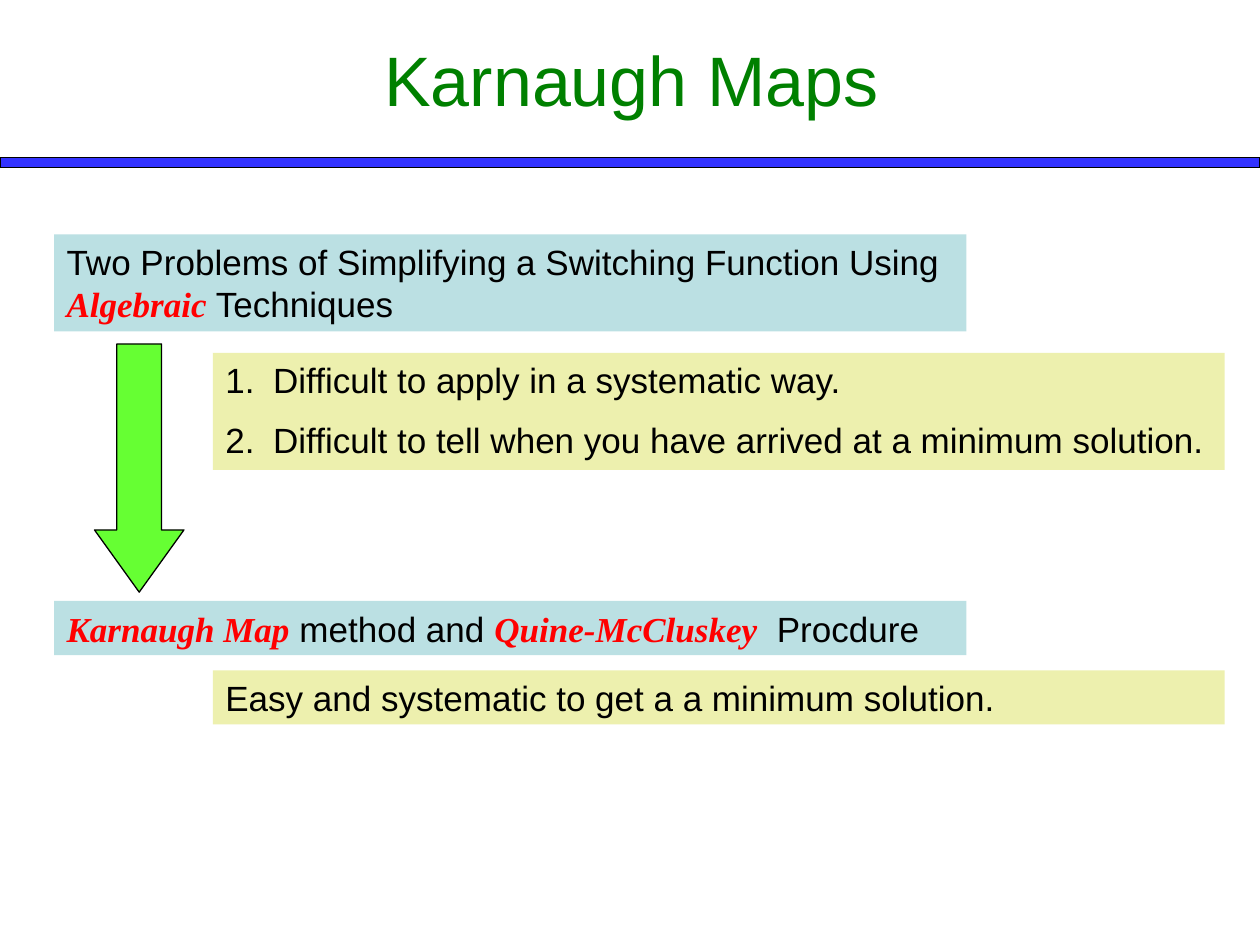
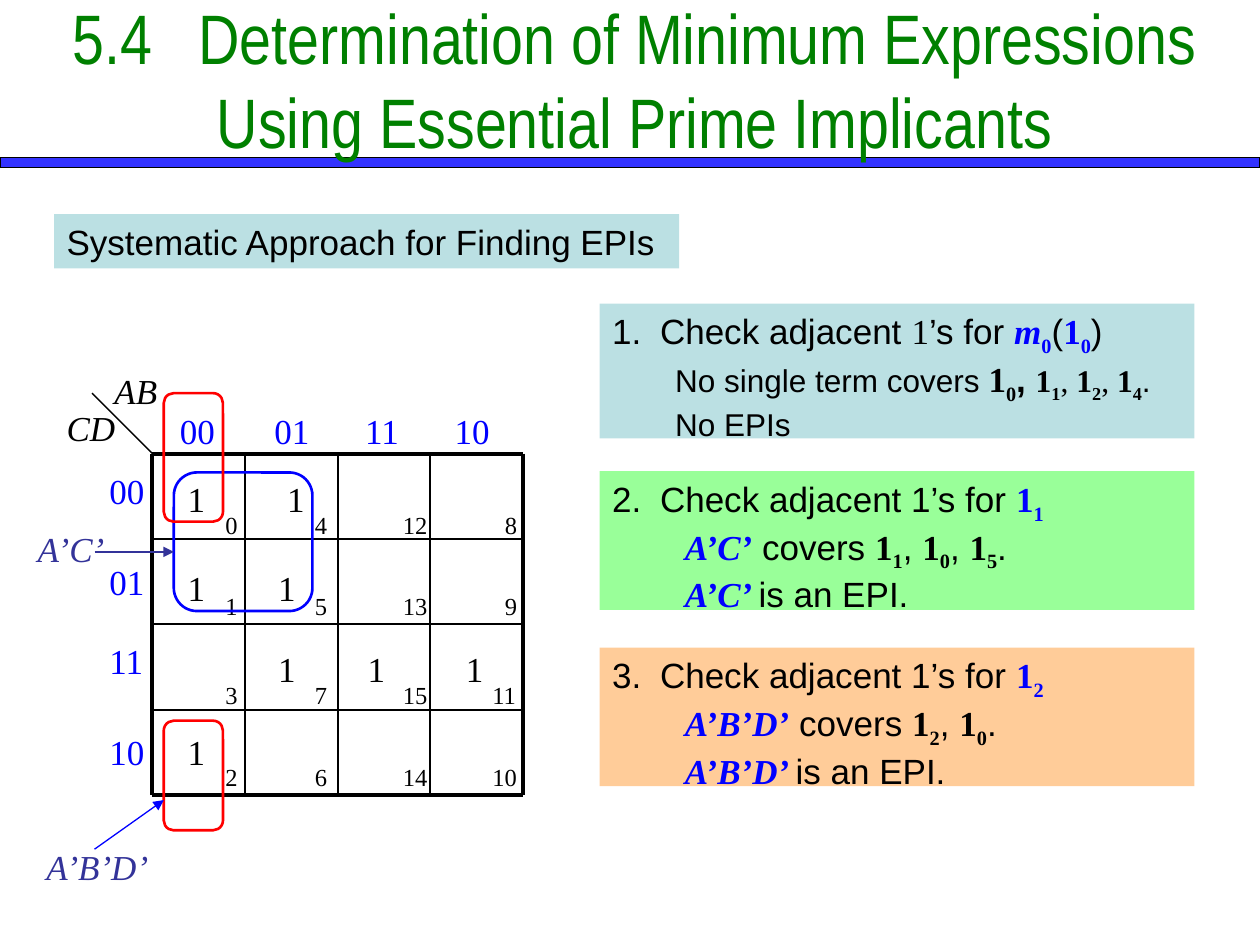
"""Build two slides on Karnaugh maps and essential prime implicants."""
import lxml.etree
import pptx
import pptx.dml.color
import pptx.enum.shapes
import pptx.enum.text
import pptx.oxml.ns
import pptx.util
from dataclasses import dataclass

Inches, Pt = pptx.util.Inches, pptx.util.Pt
SHAPES = pptx.enum.shapes.MSO_SHAPE
ALIGN = pptx.enum.text.PP_ALIGN
ANCHOR = pptx.enum.text.MSO_ANCHOR
qn = pptx.oxml.ns.qn


@dataclass(frozen=True)
class Theme:
    sans: str = "Arial"
    narrow: str = "Arial Narrow"
    serif: str = "Times New Roman"
    title_size: int = 40
    body_size: int = 20
    detail_size: int = 18
    index_size: int = 14
    black: str = "000000"
    green: str = "008000"
    band: str = "3333FF"
    red: str = "FF0000"
    blue: str = "0000FF"
    navy: str = "333399"
    teal: str = "BBE0E3"
    yellow: str = "EDF0AE"
    lime: str = "66FF33"
    mint: str = "99FF99"
    peach: str = "FFCC99"


THEME = Theme()

STYLES = {
    "plain": {},
    "strong": dict(bold=True, size=THEME.body_size),
    "serif": dict(name=THEME.serif),
    "key": dict(name=THEME.serif, color=THEME.red, bold=True, italic=True),
    "term": dict(name=THEME.serif, color=THEME.blue, bold=True, italic=True),
    "target": dict(name=THEME.serif, color=THEME.blue, bold=True),
    "one": dict(name=THEME.serif, bold=True),
    "large one": dict(name=THEME.serif, bold=True, size=THEME.body_size),
}


def minterm(index, style="one"):
    return [("1", style), (index, style, True)]


def implicant_step(target, term, covered):
    cover = [(" ", "plain"), (term, "term"), (" covers ", "plain")]
    for position, index in enumerate(covered):
        cover += ([(", ", "plain")] if position else []) + minterm(index)
    return [
        [("Check adjacent 1’s for ", "plain"), *minterm(target, "target")],
        cover + [(".", "plain")],
        [(" ", "plain"), (term + " ", "term"), ("is an EPI.", "plain")],
    ]


PROBLEM = [("Two Problems of Simplifying a Switching Function Using ", "plain"),
           ("Algebraic", "key"), (" Techniques", "plain")]
DIFFICULTIES = ["Difficult to apply in a systematic way.",
                "Difficult to tell when you have arrived at a minimum solution."]
METHODS = [("Karnaugh Map", "key"), (" method and ", "plain"),
           ("Quine-McCluskey", "key"), ("  Procdure", "plain")]
BENEFIT = "Easy and systematic to get a a minimum solution."

FIRST_STEP = [
    [("Check adjacent ", "plain"), ("1", "serif"), ("’s for ", "plain"),
     ("m", "term"), ("0", "target", True), ("(", "plain"),
     *minterm("0", "target"), (")", "plain")],
    [("No single term covers ", "plain"), *minterm("0", "large one"),
     (", ", "strong"), *minterm("1"), (", ", "serif"), *minterm("2"),
     (", ", "serif"), *minterm("4"), (".", "plain")],
    "No EPIs",
]
STEPS = [
    (2.41, 1.07, THEME.teal, THEME.detail_size, FIRST_STEP),
    (3.74, 1.10, THEME.mint, THEME.body_size, implicant_step("1", "A’C’", "105")),
    (5.14, 1.10, THEME.peach, THEME.body_size, implicant_step("2", "A’B’D’", "20")),
]

GRAY_CODE = ["00", "01", "11", "10"]
CELL_INDEXES = [[0, 4, 12, 8], [1, 5, 13, 9], [3, 7, 15, 11], [2, 6, 14, 10]]
MINTERMS = {0, 1, 2, 4, 5, 7, 11, 15}
MAP_LEFT, MAP_TOP, MAP_RIGHT, MAP_BOTTOM = 1.21, 3.60, 4.15, 6.31
CODE_LEFTS, CODE_TOPS = [1.33, 2.08, 2.80, 3.51], [3.68, 4.40, 5.03, 5.75]
ONE_LEFTS, ONE_TOPS = [1.39, 2.11, 2.82, 3.60], [3.74, 4.45, 5.09, 5.75]
INDEX_RIGHTS, INDEX_TOPS = [1.99, 2.70, 3.50, 4.21], [4.00, 4.64, 5.35, 6.00]
AXIS_NAMES = [("AB", 0.81, 2.88, 0.54), ("CD", 0.43, 3.18, 0.59)]
LOOPS = [(1.38, 3.75, 1.10, 1.10, THEME.blue),
         (1.30, 5.72, 0.47, 0.87, THEME.red),
         (1.30, 3.12, 0.47, 1.02, THEME.red)]
CALLOUTS = [("A’C’", 0.20, 4.14, 0.74, (0.75, 4.38, 1.38, 4.38), THEME.navy),
            ("A’B’D’", 0.27, 6.66, 1.02, (0.75, 6.74, 1.30, 6.35), THEME.blue)]


def rgb(color):
    return pptx.dml.color.RGBColor.from_string(color)


def set_font(font, name=None, size=None, color=None, bold=None, italic=None):
    if name:
        font.name = name
    if size:
        font.size = Pt(size)
    if color:
        font.color.rgb = rgb(color)
    if bold is not None:
        font.bold = bold
    if italic is not None:
        font.italic = italic


def fill_paragraph(para, content, size=THEME.body_size, name=THEME.sans,
                   color=THEME.black, italic=False, align=ALIGN.LEFT):
    para.alignment = align
    set_font(para.font, name, size, color, False, italic)
    if isinstance(content, str):
        para.text = content
        return
    for text, style, *subscript in content:
        span = para.add_run()
        span.text = text
        set_font(span.font, **STYLES[style])
        if subscript:
            span._r.get_or_add_rPr().set("baseline", "-25000")


def set_indent(para, margin, hanging, number=None):
    properties = para._p.get_or_add_pPr()
    properties.set("marL", str(Inches(margin)))
    properties.set("indent", str(-Inches(hanging)))
    if number:
        bullet = lxml.etree.Element(qn("a:buAutoNum"), type="arabicPeriod")
        if number > 1:
            bullet.set("startAt", str(number))
        properties.find(qn("a:defRPr")).addprevious(bullet)


def add_shape(page, kind, left, top, width, height, fill=None, line=None, weight=0.75):
    shape = page.shapes.add_shape(kind, *map(Inches, (left, top, width, height)))
    shape.shadow.inherit = False
    if fill:
        shape.fill.solid()
        shape.fill.fore_color.rgb = rgb(fill)
    else:
        shape.fill.background()
    if line:
        shape.line.color.rgb = rgb(line)
        shape.line.width = Pt(weight)
    else:
        shape.line.fill.background()
    return shape


def add_panel(page, left, top, width, height, fill, contents, detail_size=THEME.body_size):
    box = add_shape(page, SHAPES.RECTANGLE, left, top, width, height, fill)
    frame = box.text_frame
    frame.word_wrap = True
    frame.vertical_anchor = ANCHOR.TOP
    paras = [frame.paragraphs[0]] + [frame.add_paragraph() for _ in contents[1:]]
    for position, (para, content) in enumerate(zip(paras, contents)):
        fill_paragraph(para, content, detail_size if position else THEME.body_size)
    return paras


def add_label(page, text, left, top, width, height=0.43, **font):
    box = page.shapes.add_textbox(*map(Inches, (left, top, width, height)))
    box.text_frame.word_wrap = False
    fill_paragraph(box.text_frame.paragraphs[0], text, **{"name": THEME.serif, **font})
    return box


def add_line(page, ends, color, weight, arrow=False):
    line = page.shapes.add_connector(
        pptx.enum.shapes.MSO_CONNECTOR.STRAIGHT, *map(Inches, ends))
    line.line.color.rgb = rgb(color)
    line.line.width = Pt(weight)
    if arrow:
        lxml.etree.SubElement(line.line._get_or_add_ln(), qn("a:tailEnd"), type="triangle")
    lxml.etree.SubElement(line._element.spPr, qn("a:effectLst"))


def add_page(deck, title, left, width, name):
    page = deck.slides.add_slide(deck.slide_layouts[6])
    add_shape(page, SHAPES.RECTANGLE, 0, 1.25, 10, 0.08, THEME.band, THEME.black)
    box = add_label(page, title, left, 0, width, 1.25, name=name,
                    size=THEME.title_size, color=THEME.green, align=ALIGN.CENTER)
    box.text_frame.word_wrap = True
    box.text_frame.vertical_anchor = ANCHOR.MIDDLE
    return page


def build_overview(deck):
    page = add_page(deck, "Karnaugh Maps", 0.51, 9, THEME.sans)
    paras = add_panel(page, 1.69, 2.80, 8.03, 0.93, THEME.yellow, DIFFICULTIES)
    for para in paras:
        para.space_before = Pt(THEME.body_size / 2)
        set_indent(para, 0.38, 0.38, 1)
    add_panel(page, 0.43, 1.86, 7.24, 0.77, THEME.teal, [PROBLEM])
    add_panel(page, 0.43, 4.77, 7.24, 0.43, THEME.teal, [METHODS])
    add_panel(page, 1.69, 5.32, 8.03, 0.43, THEME.yellow, [BENEFIT])
    arrow = add_shape(page, SHAPES.DOWN_ARROW, 0.75, 2.73, 0.71, 1.97,
                      THEME.lime, THEME.black)
    arrow.adjustments[1] = 0.695


def draw_map(page):
    for step in range(5):
        weight = 2.25 if step in (0, 4) else 1
        x = MAP_LEFT + step * (MAP_RIGHT - MAP_LEFT) / 4
        y = MAP_TOP + step * (MAP_BOTTOM - MAP_TOP) / 4
        add_line(page, (MAP_LEFT, y, MAP_RIGHT, y), THEME.black, weight)
        add_line(page, (x, MAP_TOP, x, MAP_BOTTOM), THEME.black, weight)
    add_line(page, (MAP_LEFT, MAP_TOP, 0.73, 3.12), THEME.black, 0.75)
    for text, left, top, width in AXIS_NAMES:
        add_label(page, text, left, top, width, italic=True)
    for code, left, top in zip(GRAY_CODE, CODE_LEFTS, CODE_TOPS):
        add_label(page, code, left, 3.20, 0.48, color=THEME.blue)
        add_label(page, code, 0.77, top, 0.48, color=THEME.blue)
    for row, indexes in enumerate(CELL_INDEXES):
        for column, index in enumerate(indexes):
            width = 0.3 if index < 10 else 0.4
            add_label(page, str(index), INDEX_RIGHTS[column] - width, INDEX_TOPS[row],
                      width, 0.33, size=THEME.index_size)
            if index in MINTERMS:
                nudge = 0.07 if index == 4 else 0
                add_label(page, "1", ONE_LEFTS[column] + nudge, ONE_TOPS[row], 0.34)


def build_implicants(deck):
    title = "5.4\tDetermination of Minimum Expressions\vUsing Essential Prime Implicants"
    page = add_page(deck, title, 0.42, 9.23, THEME.narrow)
    add_panel(page, 0.43, 1.70, 4.96, 0.43, THEME.teal,
              ["Systematic Approach for Finding EPIs"])
    draw_map(page)
    for number, (top, height, fill, size, contents) in enumerate(STEPS, 1):
        check, *details = add_panel(page, 4.76, top, 4.72, height, fill, contents, size)
        set_indent(check, 0.38, 0.38, number)
        for para in details:
            set_indent(para, 0.88, 0.38)
    for left, top, width, height, color in LOOPS:
        add_shape(page, SHAPES.ROUNDED_RECTANGLE, left, top, width, height,
                  line=color, weight=1.5)
    for text, left, top, width, ends, color in CALLOUTS:
        add_label(page, text, left, top, width, color=THEME.navy, italic=True)
        add_line(page, ends, color, 0.75, arrow=True)


def main():
    deck = pptx.Presentation()
    deck.slide_width, deck.slide_height = Inches(10), Inches(7.5)
    build_overview(deck)
    build_implicants(deck)
    deck.save("out.pptx")


if __name__ == "__main__":
    main()
